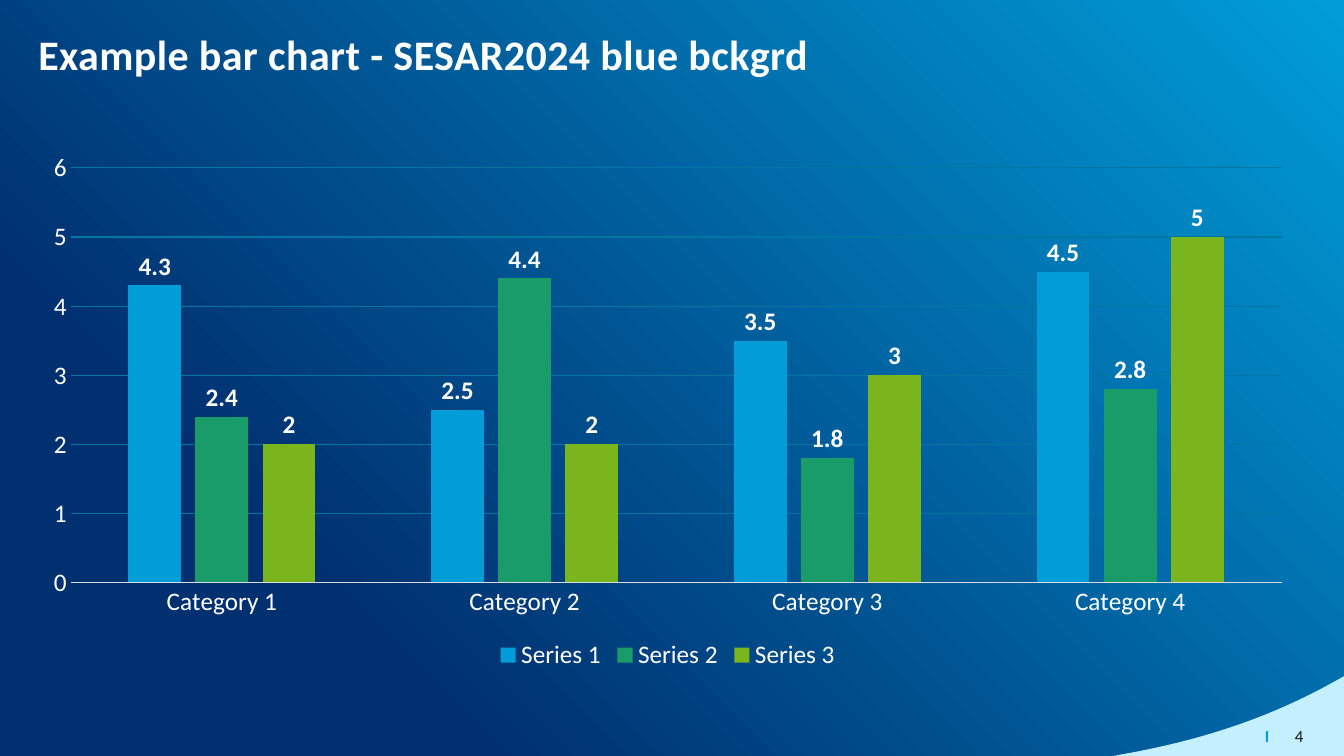
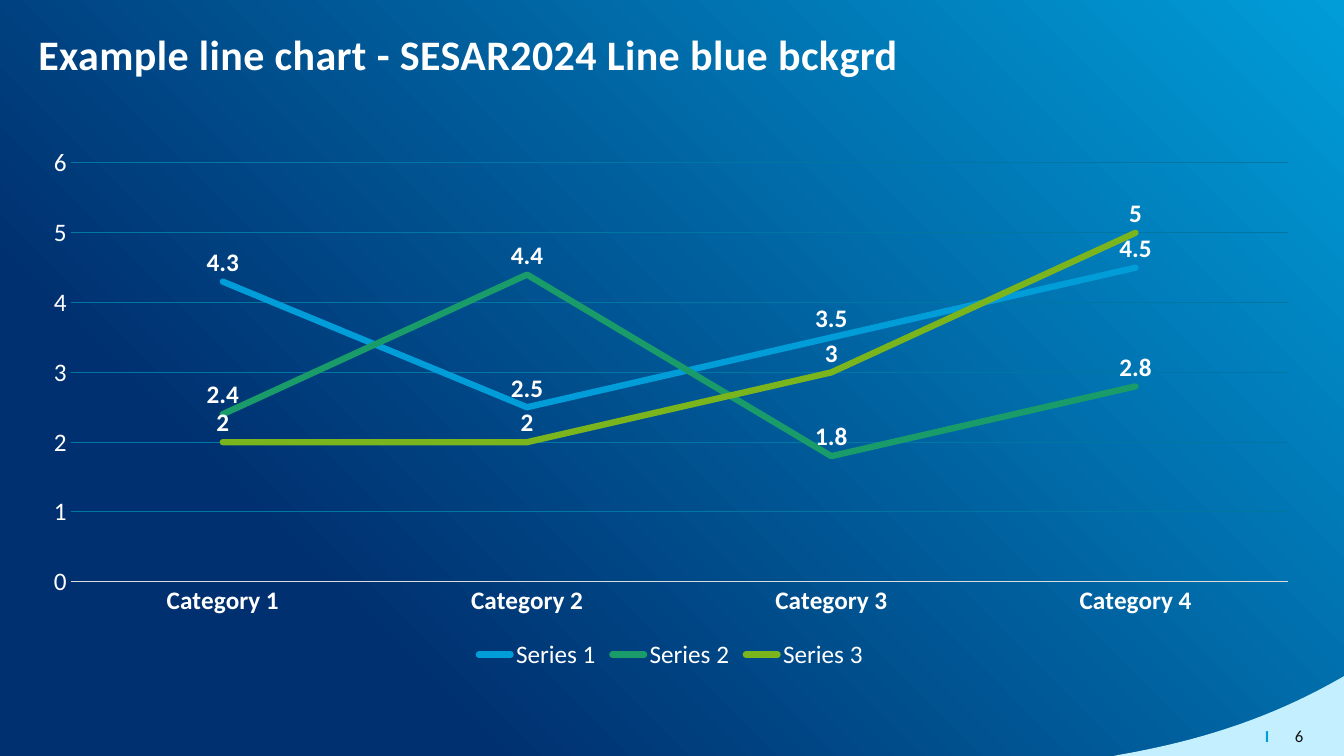
from dataclasses import dataclass
from typing import NamedTuple

import pptx
import pptx.chart.chart
import pptx.chart.data
import pptx.dml.color
import pptx.enum.chart
import pptx.enum.dml
import pptx.enum.text
import pptx.presentation
import pptx.shapes.base
import pptx.slide
import pptx.text.text
import pptx.util

Cm = pptx.util.Cm
Color = pptx.dml.color.RGBColor
Align = pptx.enum.text.PP_ALIGN
Anchor = pptx.enum.text.MSO_ANCHOR
ChartType = pptx.enum.chart.XL_CHART_TYPE
LabelPosition = pptx.enum.chart.XL_LABEL_POSITION


@dataclass(frozen=True)
class Theme:
    font: str = "Calibri"
    title_size: float = 30
    chart_size: float = 18
    footer_size: float = 12
    axis_width: float = 0.75
    series_width: float = 4.5
    white: Color = Color.from_string("FFFFFF")
    ink: Color = Color.from_string("151515")
    sky: Color = Color.from_string("009DD9")
    navy: Color = Color.from_string("00306F")
    pale: Color = Color.from_string("C4EFFF")
    axis: Color = Color.from_string("DCDCDC")
    grid: Color = Color.from_string("0076A3")
    green: Color = Color.from_string("199C69")
    lime: Color = Color.from_string("7AB51D")


THEME = Theme()


class Box(NamedTuple):
    """A frame in centimetres."""

    left: float
    top: float
    width: float
    height: float

    def lengths(self) -> tuple[Cm, ...]:
        return tuple(Cm(value) for value in self)


class Point(NamedTuple):
    """A position in centimetres."""

    x: float
    y: float


class Series(NamedTuple):
    name: str
    values: tuple[float, ...]
    color: Color


class ChartSlide(NamedTuple):
    title: str
    number: str
    chart_type: ChartType
    frame: Box
    label_position: LabelPosition
    bold_categories: bool


SLIDE_WIDTH, SLIDE_HEIGHT = 33.87, 19.05
TITLE_BOX = Box(0.71, 0.74, 28.02, 2.84)
MARKER_BOX = Box(31.46, 18.03, 0.94, 1.02)
NUMBER_BOX = Box(25.48, 18.03, 7.62, 1.02)

SWOOSH_CURVES = (
    (Point(28.07, 19.05), Point(28.3, 19.0), Point(28.52, 18.97), Point(28.75, 18.92)),
    (Point(28.75, 18.92), Point(30.43, 18.59), Point(32.03, 18.06), Point(33.55, 17.22)),
)
SWOOSH_TOP = 17.04
CURVE_STEPS = 16

CATEGORIES = [f"Category {index}" for index in range(1, 5)]
SERIES = (
    Series("Series 1", (4.3, 2.5, 3.5, 4.5), THEME.sky),
    Series("Series 2", (2.4, 4.4, 1.8, 2.8), THEME.green),
    Series("Series 3", (2, 2, 3, 5), THEME.lime),
)
SLIDES = (
    ChartSlide("Example bar chart - SESAR2024 blue bckgrd", "4", ChartType.COLUMN_CLUSTERED,
               Box(0.71, 3.58, 32.23, 13.44), LabelPosition.OUTSIDE_END, False),
    ChartSlide("Example line chart - SESAR2024 Line blue bckgrd", "6", ChartType.LINE,
               Box(0.71, 3.45, 32.39, 13.56), LabelPosition.ABOVE, True),
)


def set_font(font: pptx.text.text.Font, size: float, color: Color, bold: bool = False) -> None:
    font.name = THEME.font
    font.size = pptx.util.Pt(size)
    font.bold = bold
    font.color.rgb = color


def write_text(shape: pptx.shapes.base.BaseShape, text: str, *, size: float, color: Color,
               bold: bool = False, align: Align = Align.LEFT, anchor: Anchor = Anchor.MIDDLE,
               line_spacing: float = 1.0, tracking: float = 0) -> None:
    frame = shape.text_frame
    frame.word_wrap = True
    frame.auto_size = pptx.enum.text.MSO_AUTO_SIZE.NONE
    frame.vertical_anchor = anchor
    paragraph = frame.paragraphs[0]
    paragraph.alignment = align
    paragraph.line_spacing = line_spacing
    run = paragraph.add_run()
    run.text = text
    set_font(run.font, size, color, bold)
    if tracking:
        run.font._element.set("spc", str(round(tracking * 100)))


def set_background(master: pptx.slide.SlideMaster) -> None:
    fill = master.background.fill
    fill.gradient()
    fill.gradient_angle = 225
    for stop, position, color in zip(fill.gradient_stops, (0, 0.77), (THEME.sky, THEME.navy)):
        stop.position = position
        stop.color.rgb = color


def curve_point(curve: tuple[Point, ...], t: float) -> Point:
    """Evaluate a cubic Bezier curve at t."""
    weights = ((1 - t) ** 3, 3 * t * (1 - t) ** 2, 3 * t ** 2 * (1 - t), t ** 3)
    return Point(sum(w * p.x for w, p in zip(weights, curve)),
                 sum(w * p.y for w, p in zip(weights, curve)))


def add_swoosh(slide: pptx.slide.Slide) -> None:
    edge = [curve_point(curve, step / CURVE_STEPS)
            for curve in SWOOSH_CURVES for step in range(CURVE_STEPS + 1)]
    outline = [Point(SLIDE_WIDTH, SLIDE_HEIGHT), *edge, Point(SLIDE_WIDTH, SWOOSH_TOP)]
    start, *rest = [(Cm(point.x), Cm(point.y)) for point in outline]
    builder = slide.shapes.build_freeform(*start)
    builder.add_line_segments(rest, close=True)
    swoosh = builder.convert_to_shape()
    swoosh.shadow.inherit = False
    swoosh.fill.solid()
    swoosh.fill.fore_color.rgb = THEME.pale
    swoosh.line.fill.background()


def add_footer(slide: pptx.slide.Slide, number: str) -> None:
    add_swoosh(slide)
    marker = slide.shapes.add_textbox(*MARKER_BOX.lengths())
    write_text(marker, "I", size=THEME.footer_size, color=THEME.sky, bold=True,
               align=Align.CENTER)
    number_box = slide.shapes.add_textbox(*NUMBER_BOX.lengths())
    write_text(number_box, number, size=THEME.footer_size, color=THEME.ink, align=Align.RIGHT)


def add_title(slide: pptx.slide.Slide, text: str) -> None:
    title = slide.shapes.title
    title.left, title.top, title.width, title.height = TITLE_BOX.lengths()
    write_text(title, text, size=THEME.title_size, color=THEME.white, bold=True,
               anchor=Anchor.TOP, line_spacing=0.9, tracking=0.3)


def style_axes(chart: pptx.chart.chart.Chart, bold_categories: bool) -> None:
    category_axis, value_axis = chart.category_axis, chart.value_axis
    for axis, bold in ((category_axis, bold_categories), (value_axis, False)):
        axis.major_tick_mark = axis.minor_tick_mark = pptx.enum.chart.XL_TICK_MARK.NONE
        set_font(axis.tick_labels.font, THEME.chart_size, THEME.white, bold)
    value_axis.minimum_scale, value_axis.maximum_scale, value_axis.major_unit = 0, 6, 1
    value_axis.format.line.fill.background()
    value_axis.has_major_gridlines = True
    for line, color in ((category_axis.format.line, THEME.axis),
                        (value_axis.major_gridlines.format.line, THEME.grid)):
        line.color.rgb = color
        line.width = pptx.util.Pt(THEME.axis_width)


def style_series(chart: pptx.chart.chart.Chart, content: ChartSlide) -> None:
    plot = chart.plots[0]
    plot.vary_by_categories = False
    is_line = content.chart_type == ChartType.LINE
    if not is_line:
        plot.gap_width, plot.overlap = 219, -27
    for series, data in zip(plot.series, SERIES):
        if is_line:
            series.smooth = False
            series.marker.style = pptx.enum.chart.XL_MARKER_STYLE.NONE
            line = series.format.line
            line.color.rgb = data.color
            line.width = pptx.util.Pt(THEME.series_width)
            series.format._element.spPr.ln.set("cap", "rnd")
        else:
            series.invert_if_negative = False
            series.format.fill.solid()
            series.format.fill.fore_color.rgb = data.color
        labels = series.data_labels
        labels.show_value = True
        labels.position = content.label_position
        set_font(labels.font, THEME.chart_size, THEME.white, bold=True)


def add_chart(slide: pptx.slide.Slide, content: ChartSlide) -> None:
    chart_data = pptx.chart.data.CategoryChartData()
    chart_data.categories = CATEGORIES
    for series in SERIES:
        chart_data.add_series(series.name, series.values)
    chart = slide.shapes.add_chart(
        content.chart_type, *content.frame.lengths(), chart_data).chart
    set_font(chart.font, THEME.chart_size, THEME.white)
    chart.has_title = False
    chart.has_legend = True
    chart.legend.position = pptx.enum.chart.XL_LEGEND_POSITION.BOTTOM
    chart.legend.include_in_layout = False
    set_font(chart.legend.font, THEME.chart_size, THEME.white)
    style_axes(chart, content.bold_categories)
    style_series(chart, content)


def add_chart_slide(presentation: pptx.presentation.Presentation, content: ChartSlide) -> None:
    slide = presentation.slides.add_slide(presentation.slide_layouts.get_by_name("Title Only"))
    add_footer(slide, content.number)
    add_title(slide, content.title)
    add_chart(slide, content)


def main() -> None:
    presentation = pptx.Presentation()
    presentation.slide_width, presentation.slide_height = Cm(SLIDE_WIDTH), Cm(SLIDE_HEIGHT)
    set_background(presentation.slide_master)
    for content in SLIDES:
        add_chart_slide(presentation, content)
    presentation.save("out.pptx")


if __name__ == "__main__":
    main()
